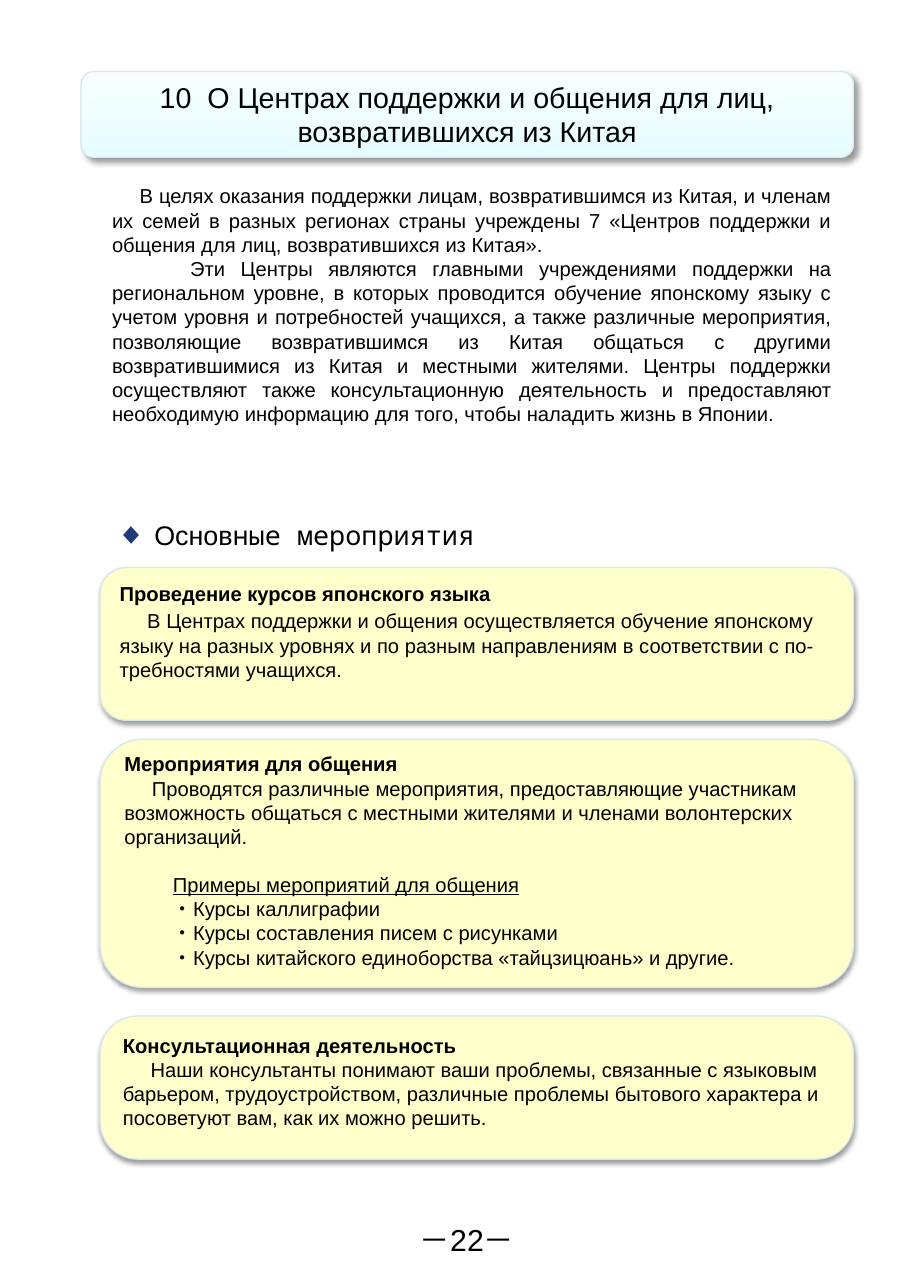
"""Build the page about support and communication centres."""
import pptx
import pptx.dml.color
import pptx.enum.shapes
import pptx.enum.text
import pptx.oxml.ns
import pptx.util
from lxml import etree

Cm = pptx.util.Cm
Pt = pptx.util.Pt
Align = pptx.enum.text.PP_ALIGN
Anchor = pptx.enum.text.MSO_ANCHOR
qn = pptx.oxml.ns.qn


def rgb(value):
    return pptx.dml.color.RGBColor.from_string(value)


class Page:
    font = "Arial"
    ink = "000000"
    edge = "D5E8EA"
    cream = "FFFFCC"
    body = 12
    indent = 0.58

    def __init__(self, slide):
        self.slide = slide

    def text_box(self, left, top, width, height, anchor=Anchor.TOP):
        box = self.slide.shapes.add_textbox(Cm(left), Cm(top), Cm(width), Cm(height))
        frame = box.text_frame
        frame.word_wrap = True
        frame.vertical_anchor = anchor
        return frame

    def panel(self, left, top, width, height, corner, shadow, gradient=None, anchor=Anchor.TOP):
        shape = self.slide.shapes.add_shape(
            pptx.enum.shapes.MSO_SHAPE.ROUNDED_RECTANGLE,
            Cm(left), Cm(top), Cm(width), Cm(height))
        shape.adjustments[0] = corner
        if gradient:
            shape.fill.gradient()
            shape.fill.gradient_angle = 90
            for stop, color in zip(shape.fill.gradient_stops, gradient):
                stop.color.rgb = rgb(color)
        else:
            shape.fill.solid()
            shape.fill.fore_color.rgb = rgb(self.cream)
        shape.line.color.rgb = rgb(self.edge)
        shape.line.width = Pt(0.75)
        self.cast_shadow(shape, *shadow)
        frame = shape.text_frame
        frame.word_wrap = True
        frame.vertical_anchor = anchor
        return frame

    def cast_shadow(self, shape, alpha, blur, distance, angle):
        shape.shadow.inherit = False
        effects = shape._element.spPr.find(qn("a:effectLst"))
        outer = etree.SubElement(
            effects, qn("a:outerShdw"), blurRad=str(Pt(blur)), dist=str(Pt(distance)),
            dir=str(angle * 60000), algn="ctr", rotWithShape="0")
        color = etree.SubElement(outer, qn("a:srgbClr"), val=self.ink)
        etree.SubElement(color, qn("a:alpha"), val=str(alpha * 1000))

    def paragraph(self, frame, lines, align=Align.LEFT, first=0, margin=0, before=0,
                  spacing=None, **style):
        unused = not frame.paragraphs[0].runs
        paragraph = frame.paragraphs[0] if unused else frame.add_paragraph()
        paragraph.alignment = align
        paragraph.space_before = Pt(before)
        if spacing:
            paragraph.line_spacing = Pt(spacing)
        properties = paragraph._p.get_or_add_pPr()
        properties.set("marL", str(Cm(margin)))
        properties.set("indent", str(Cm(first)))
        for number, line in enumerate(lines):
            if number:
                paragraph.add_line_break()
            self.run(paragraph, line, **style)
        return paragraph

    def run(self, paragraph, text, size=body, color=ink, font=font, bold=False, underline=False):
        run = paragraph.add_run()
        run.text = text
        run.font.size = Pt(size)
        run.font.name = font
        run.font.bold = bold
        run.font.underline = underline
        run.font.color.rgb = rgb(color)

    def activity(self, top, height, corner, title, lines, gap=0):
        frame = self.panel(2.1, top, 15.8, height, corner, (38, 3.1, 1.6, 90))
        self.paragraph(frame, [title], bold=True)
        self.paragraph(frame, lines, first=self.indent, before=gap)
        return frame


def main():
    deck = pptx.Presentation()
    deck.slide_width, deck.slide_height = Cm(19), Cm(27)
    page = Page(deck.slides.add_slide(deck.slide_layouts[6]))

    page_number = page.text_box(8.12, 25.48, 3.35, 1.02, Anchor.MIDDLE)
    page.paragraph(page_number, ["－22－"], Align.CENTER, size=18)

    title = page.panel(1.7, 1.5, 16.2, 1.8, 0.15, (40, 4, 3, 45),
                       ("E6FDFF", "F8FEFF"), Anchor.MIDDLE)
    for line in ("10  О Центрах поддержки и общения для лиц,", "возвратившихся из Китая"):
        page.paragraph(title, [line], Align.CENTER, spacing=20, size=17)

    introduction = page.text_box(2.1, 3.7, 15.6, 5.38, Anchor.MIDDLE)
    page.paragraph(introduction, [
        "В целях оказания поддержки лицам, возвратившимся из Китая, и членам их семей "
        "в разных регионах страны учреждены 7 «Центров поддержки и общения для лиц, "
        "возвратившихся из Китая»."], Align.JUSTIFY, page.indent)
    page.paragraph(introduction, [
        "Эти Центры являются главными учреждениями поддержки на региональном уровне, "
        "в которых проводится обучение японскому языку с учетом уровня и потребностей "
        "учащихся, а также различные мероприятия, позволяющие возвратившимся из Китая "
        "общаться с другими возвратившимися из Китая и местными жителями. Центры "
        "поддержки осуществляют также консультационную деятельность и предоставляют "
        "необходимую информацию для того, чтобы наладить жизнь в Японии."],
        Align.JUSTIFY, 1.64)

    page.activity(11.9, 3.2, 0.17, "Проведение курсов японского языка", [
        "В Центрах поддержки и общения осуществляется обучение японскому",
        "языку на разных уровнях и по разным направлениям в соответствии с по-",
        "требностями учащихся."], gap=2)

    meetings = page.activity(15.5, 5.2, 0.17, "Мероприятия для общения", [
        "Проводятся различные мероприятия, предоставляющие участникам",
        "возможность общаться с местными жителями и членами волонтерских",
        "организаций."])
    meetings.margin_top = 0
    page.paragraph(meetings, ["Примеры мероприятий для общения"],
                   margin=1.02, before=14, underline=True)
    for example in ("・Курсы каллиграфии", "・Курсы составления писем с рисунками",
                    "・Курсы китайского единоборства «тайцзицюань» и другие."):
        page.paragraph(meetings, [example], margin=1.02)

    page.activity(21.3, 3, 0.26, "Консультационная деятельность", [
        "Наши консультанты понимают ваши проблемы, связанные с языковым",
        "барьером, трудоустройством, различные проблемы бытового характера и",
        "посоветуют вам, как их можно решить."])

    heading_frame = page.text_box(2.18, 10.67, 11.73, 1.02)
    heading = page.paragraph(heading_frame, ["◆ "], size=18, color="1F3C7B")
    page.run(heading, "Основ", size=16)
    page.run(heading, "ные мероприятия", size=16, font="Noto Sans Mono")

    deck.save("out.pptx")


if __name__ == "__main__":
    main()
